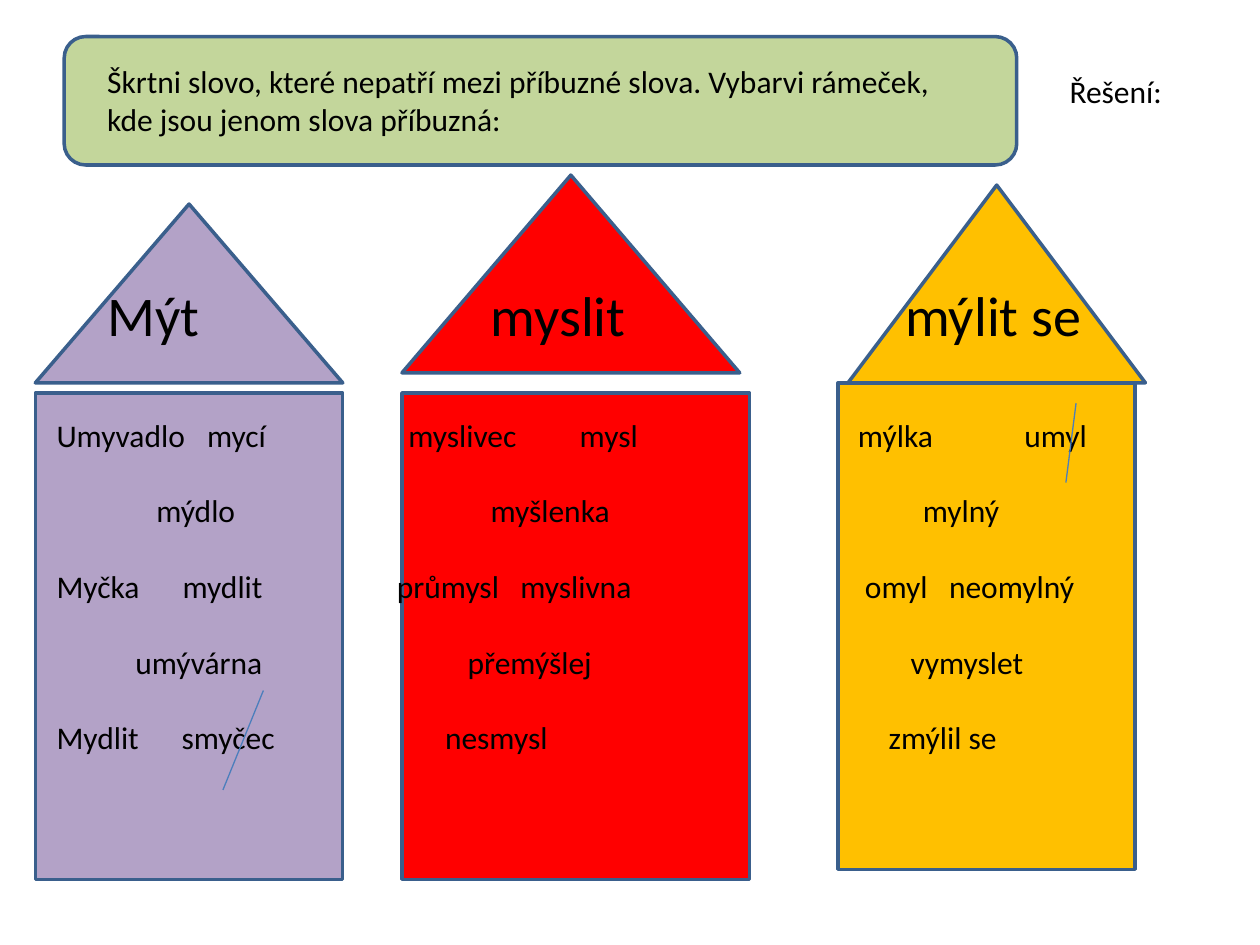
from lxml.etree import SubElement
from pptx import Presentation
from pptx.dml.color import RGBColor
from pptx.enum.shapes import MSO_CONNECTOR, MSO_SHAPE
from pptx.enum.text import MSO_ANCHOR, MSO_AUTO_SIZE, PP_ALIGN
from pptx.oxml.ns import qn
from pptx.util import Pt

FONT = "Calibri"
INK = "000000"
OUTLINE = "3A5F8C"
STRIKE = "4B7EBC"
GREEN, VIOLET, RED, AMBER = "C3D69B", "B3A2C7", "FF0000", "FFC000"

HOUSES = [
    (AMBER, (484.6, 105.8, 169.9, 113), (478.8, 218.9, 169.9, 277.9)),
    (RED, (229.7, 100.1, 193, 113), (229.7, 224.6, 198.7, 277.9)),
    (VIOLET, (20.2, 116.6, 175.7, 102.2), (20.2, 224.6, 175.7, 277.9)),
]
HEADINGS = [(29, "Mýt"), (248, "myslit"), (485, "mýlit se")]
WORD_ROWS = [
    [(0, "Umyvadlo"), (86, "mycí"), (201, "myslivec"), (299, "mysl"),
     (458, "mýlka"), (553, "umyl")],
    [(57, "mýdlo"), (248, "myšlenka"), (495, "mylný")],
    [(0, "Myčka"), (72, "mydlit"), (194.5, "průmysl"), (265, "myslivna"),
     (462, "omyl"), (510, "neomylný")],
    [(45, "umývárna"), (235, "přemýšlej"), (488, "vymyslet")],
    [(0, "Mydlit"), (71.5, "smyčec"), (222, "nesmysl"), (475.5, "zmýlil se")],
]
STRIKES = [(150.5, 394.6, 127.4, 451.4), (614.9, 230.4, 609.1, 275.8)]


def color(value):
    return RGBColor.from_string(value)


class Worksheet:
    """Draw styled elements on the current slide."""

    def __init__(self, deck):
        self.slide = deck.slides.add_slide(deck.slide_layouts[5])

    def shape(self, kind, frame, fill):
        shape = self.slide.shapes.add_shape(kind, *map(Pt, frame))
        shape.shadow.inherit = False
        shape.fill.solid()
        shape.fill.fore_color.rgb = color(fill)
        shape.line.color.rgb = color(OUTLINE)
        shape.line.width = Pt(2)

    def format(self, para, size=18):
        para.alignment = PP_ALIGN.LEFT
        para.font.name = FONT
        para.font.size = Pt(size)
        para.font.color.rgb = color(INK)

    def title(self, text, frame):
        title = self.slide.shapes.title
        title.left, title.top, title.width, title.height = map(Pt, frame)
        title.text_frame.text = text
        title.text_frame.vertical_anchor = MSO_ANCHOR.TOP
        title.text_frame.auto_size = MSO_AUTO_SIZE.NONE
        self.format(title.text_frame.paragraphs[0])
        self.slide.shapes._spTree.append(title._element)

    def text_box(self, frame):
        box = self.slide.shapes.add_textbox(*map(Pt, frame))
        box.text_frame.word_wrap = True
        return box.text_frame

    def label(self, text, frame):
        para = self.text_box(frame).paragraphs[0]
        para.text = text
        self.format(para)

    def tabbed_line(self, para, words, size=18):
        para.text = "\t".join(([""] if words[0][0] else []) + [word for _, word in words])
        self.format(para, size)
        tabs = SubElement(para._p.get_or_add_pPr(), qn("a:tabLst"))
        para._p.pPr.insert_element_before(tabs, "a:defRPr", "a:extLst")
        for stop, _ in words:
            if stop:
                SubElement(tabs, qn("a:tab"), pos=str(int(Pt(stop))), algn="l")

    def word_list(self, headings, rows, frame):
        text = self.text_box(frame)
        self.tabbed_line(text.paragraphs[0], headings, 32)
        text.paragraphs[0].space_after = Pt(17)
        for row in rows:
            para = text.add_paragraph()
            self.tabbed_line(para, row)
            para.space_before = Pt(21.6)

    def line(self, ends):
        line = self.slide.shapes.add_connector(MSO_CONNECTOR.STRAIGHT, *map(Pt, ends))
        line.line.color.rgb = color(STRIKE)
        line.line.width = Pt(0.75)
        SubElement(line._element.spPr, qn("a:effectLst"))


def main():
    deck = Presentation()
    deck.slide_width, deck.slide_height = Pt(720), Pt(540)
    sheet = Worksheet(deck)
    for fill, roof, _ in HOUSES:
        sheet.shape(MSO_SHAPE.ISOSCELES_TRIANGLE, roof, fill)
    for fill, _, wall in HOUSES:
        sheet.shape(MSO_SHAPE.RECTANGLE, wall, fill)
    sheet.shape(MSO_SHAPE.ROUNDED_RECTANGLE, (36.7, 20.9, 544.3, 73.4), GREEN)
    sheet.word_list(HEADINGS, WORD_ROWS, (25.2, 157, 617.8, 280.8))
    sheet.title(
        "Škrtni slovo, které nepatří mezi příbuzné slova. "
        "Vybarvi rámeček, kde jsou jenom slova příbuzná:",
        (54, 31.7, 487.4, 51.1),
    )
    sheet.label("Řešení:", (604.1, 37.4, 79.2, 28.8))
    for ends in STRIKES:
        sheet.line(ends)
    deck.save("out.pptx")


if __name__ == "__main__":
    main()
